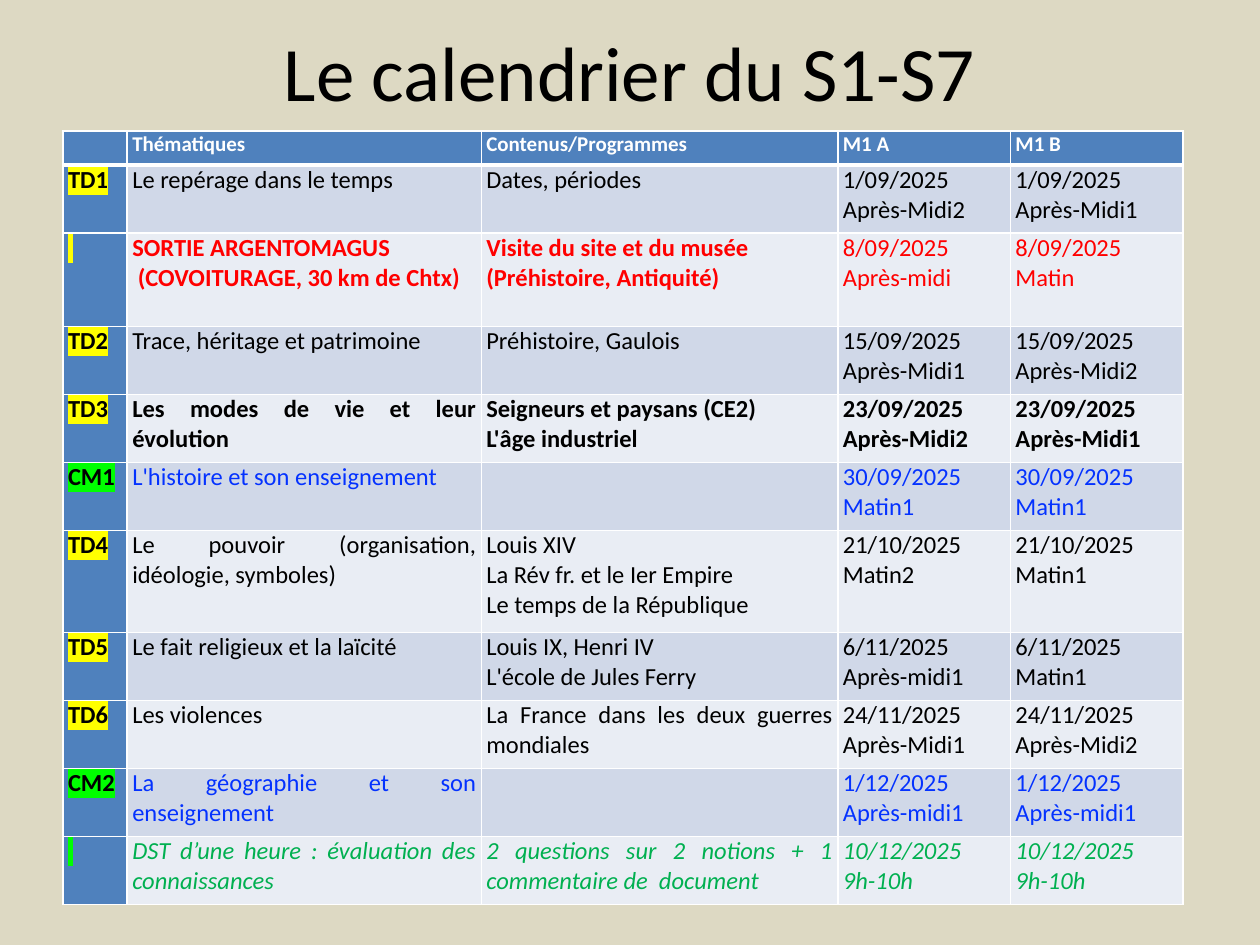
from lxml import etree
from pptx import Presentation
from pptx.dml.color import RGBColor
from pptx.enum.text import MSO_ANCHOR, PP_ALIGN as Align
from pptx.oxml.ns import qn
from pptx.util import Inches, Pt

# Content
TITLE = "Le calendrier du S1-S7"
HEADER = ["", "Thématiques", "Contenus/Programmes", "M1 A", "M1 B"]

# Each session: format, highlight of its code, height in rows, cells
SESSIONS = [
    ("plain", "yellow", 2, ["TD1", "Le repérage dans le temps", "Dates, périodes",
     "1/09/2025\nAprès-Midi2", "1/09/2025\nAprès-Midi1"]),
    ("outing", "yellow", 2.74, [" ", "SORTIE ARGENTOMAGUS\n (COVOITURAGE, 30 km de Chtx)",
     "Visite du site et du musée\n(Préhistoire, Antiquité)",
     "8/09/2025\nAprès-midi", "8/09/2025\nMatin"]),
    ("plain", "yellow", 2, ["TD2", "Trace, héritage et patrimoine", "Préhistoire, Gaulois",
     "15/09/2025\nAprès-Midi1", "15/09/2025\nAprès-Midi2"]),
    ("strong", "yellow", 2, ["TD3", "Les modes de vie et leur évolution",
     "Seigneurs et paysans (CE2)\nL'âge industriel",
     "23/09/2025\nAprès-Midi2", "23/09/2025\nAprès-Midi1"]),
    ("lecture", "green", 2, ["CM1", "L'histoire et son enseignement", "",
     "30/09/2025\nMatin1", "30/09/2025\nMatin1"]),
    ("plain", "yellow", 3, ["TD4", "Le pouvoir (organisation, idéologie, symboles)",
     "Louis XIV\nLa Rév fr. et le Ier Empire\nLe temps de la République",
     "21/10/2025\nMatin2", "21/10/2025\nMatin1"]),
    ("plain", "yellow", 2, ["TD5", "Le fait religieux et la laïcité",
     "Louis IX, Henri IV\nL'école de Jules Ferry",
     "6/11/2025\nAprès-midi1", "6/11/2025\nMatin1"]),
    ("plain", "yellow", 2, ["TD6", "Les violences", "La France dans les deux guerres mondiales",
     "24/11/2025\nAprès-Midi1", "24/11/2025\nAprès-Midi2"]),
    ("lecture", "green", 2, ["CM2", "La géographie et son enseignement", "",
     "1/12/2025\nAprès-midi1", "1/12/2025\nAprès-midi1"]),
    ("exam", "green", 2, [" ", "DST d’une heure : évaluation des connaissances",
     "2 questions sur 2 notions + 1 commentaire de  document",
     "10/12/2025\n9h-10h", "10/12/2025\n9h-10h"]),
]

# Formats
BLUE, BANDS, WHITE, BLACK = "4F81BD", ("E9EDF4", "D0D8E8"), "FFFFFF", "000000"
HIGHLIGHTS = {"yellow": "FFFF00", "green": "00FF00"}
FORMATS = {
    "header": dict(size=Pt(12), bold=True, color=WHITE),
    "code": dict(size=Pt(14), bold=True, color=BLACK),
    "plain": dict(size=Pt(14), bold=False, color=BLACK),
    "strong": dict(size=Pt(14), bold=True, color=BLACK),
    "outing": dict(size=Pt(14), bold=True, color="FF0000"),
    "outing date": dict(size=Pt(14), bold=False, color="FF0000"),
    "lecture": dict(size=Pt(14), bold=False, color="0432FF"),
    "exam": dict(size=Pt(14), bold=False, italic=True, color="00B050"),
}
COLUMNS = [0.51, 2.81, 2.83, 1.37, 1.37]
ROW = 0.27
MARGINS = dict(margin_left=0.04, margin_top=0, margin_right=0.04, margin_bottom=0)


def rgb(value):
    return RGBColor.from_string(value)


def format_span(span, style, highlight=None):
    span.font.name = "Calibri"
    for name, value in style.items():
        if name == "color":
            span.font.color.rgb = rgb(value)
        else:
            setattr(span.font, name, value)
    if highlight:
        mark = etree.Element(qn("a:highlight"))
        etree.SubElement(mark, qn("a:srgbClr"), val=highlight)
        span.font._element.find(qn("a:solidFill")).addnext(mark)


def add_borders(cell, bottom):
    properties = cell._tc.get_or_add_tcPr()
    for place, (side, width) in enumerate(zip("LRTB", (1, 1, 1, bottom))):
        line = etree.Element(qn(f"a:ln{side}"), w=str(Pt(width)))
        fill = etree.SubElement(line, qn("a:solidFill"))
        etree.SubElement(fill, qn("a:srgbClr"), val=WHITE)
        properties.insert(place, line)


def fill_cell(cell, text, style, color, highlight=None, bottom=1):
    for name, value in MARGINS.items():
        setattr(cell, name, Inches(value))
    cell.fill.solid()
    cell.fill.fore_color.rgb = rgb(color)
    add_borders(cell, bottom)
    frame = cell.text_frame
    for number, line in enumerate(text.split("\n")):
        para = frame.add_paragraph() if number else frame.paragraphs[0]
        para.alignment = Align.JUSTIFY
        if line:
            span = para.add_run()
            span.text = line
            format_span(span, style, highlight)
        else:  # keeps the row of an empty cell low
            size = str(int(style["size"].pt * 100))
            etree.SubElement(para._p, qn("a:endParaRPr"), sz=size)


deck = Presentation()
deck.slide_width, deck.slide_height = Inches(10), Inches(7.5)
page = deck.slides.add_slide(deck.slide_layouts[5])
page.background.fill.solid()
page.background.fill.fore_color.rgb = rgb("DDD9C3")

# Title
title = page.shapes.title
title.left, title.top, title.width, title.height = map(Inches, (0.5, 0, 9, 1.12))
title.text_frame.vertical_anchor = MSO_ANCHOR.MIDDLE
para = title.text_frame.paragraphs[0]
para.alignment = Align.CENTER
span = para.add_run()
span.text = TITLE
format_span(span, dict(size=Pt(44), color=BLACK))

# Calendar table
heights = [ROW] + [ROW * rows for _, _, rows, _ in SESSIONS]
calendar = page.shapes.add_table(
    len(heights), len(COLUMNS), Inches(0.5), Inches(1.04),
    Inches(sum(COLUMNS)), Inches(sum(heights))).table
for column, width in zip(calendar.columns, COLUMNS):
    column.width = Inches(width)
for row, height in zip(calendar.rows, heights):
    row.height = Inches(height)

for column, text in enumerate(HEADER):
    fill_cell(calendar.cell(0, column), text, FORMATS["header"], BLUE, bottom=3)

for row, (kind, highlight, _, texts) in enumerate(SESSIONS, 1):
    for column, text in enumerate(texts):
        cell = calendar.cell(row, column)
        if column == 0:
            fill_cell(cell, text, FORMATS["code"], BLUE, HIGHLIGHTS[highlight])
        else:
            dated = f"{kind} date" if column > 2 else kind
            fill_cell(cell, text, FORMATS.get(dated, FORMATS[kind]), BANDS[row % 2])

deck.save("out.pptx")
